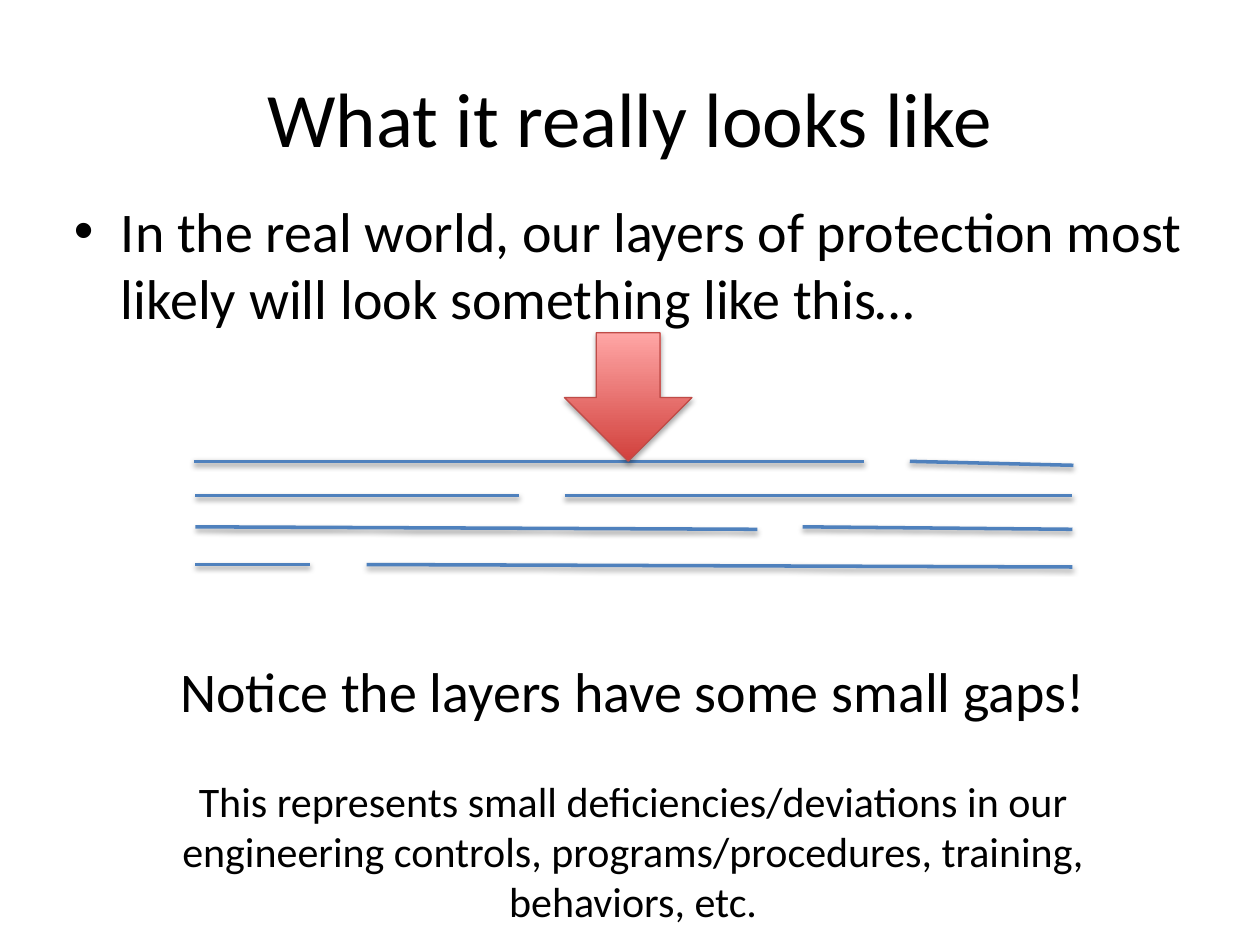
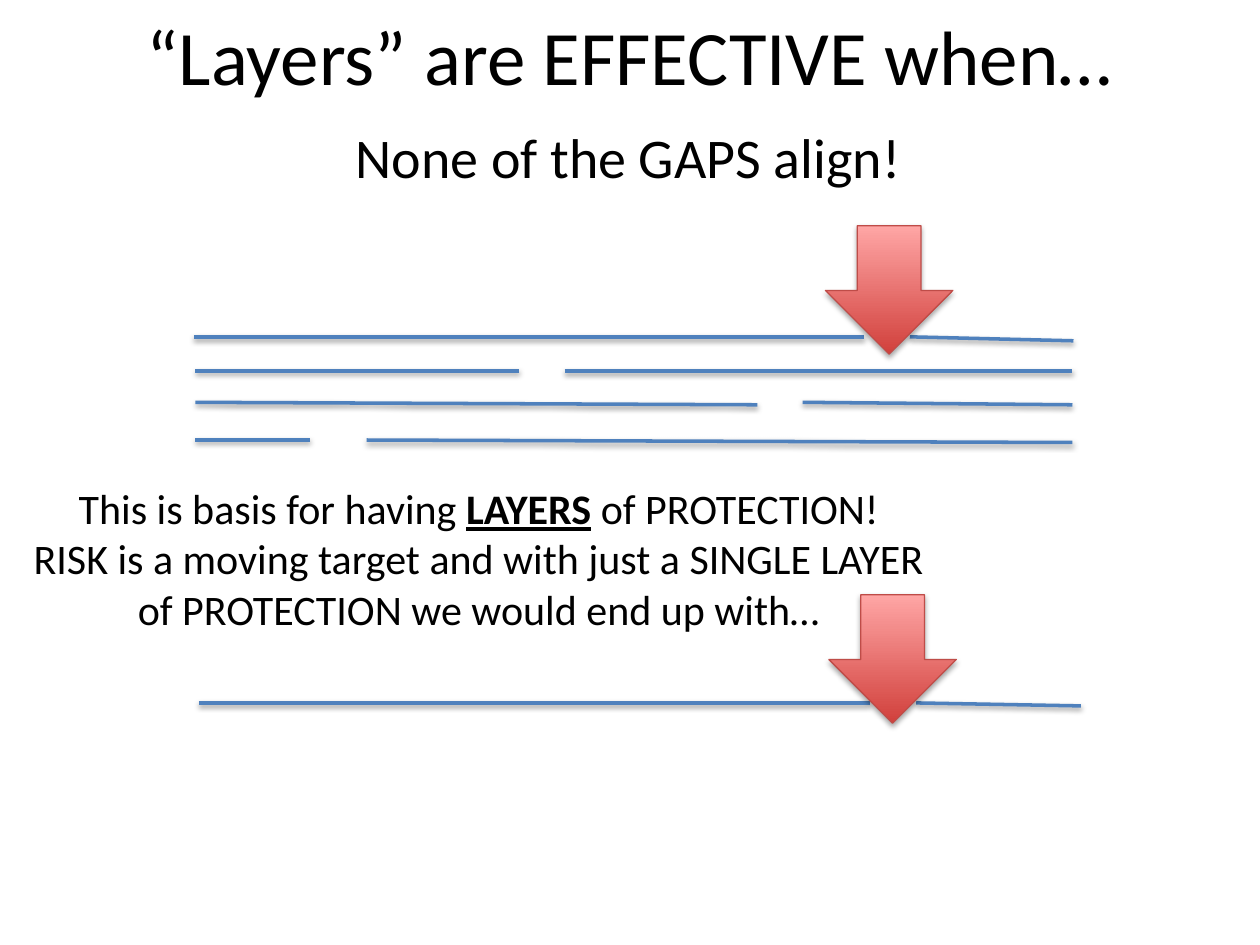
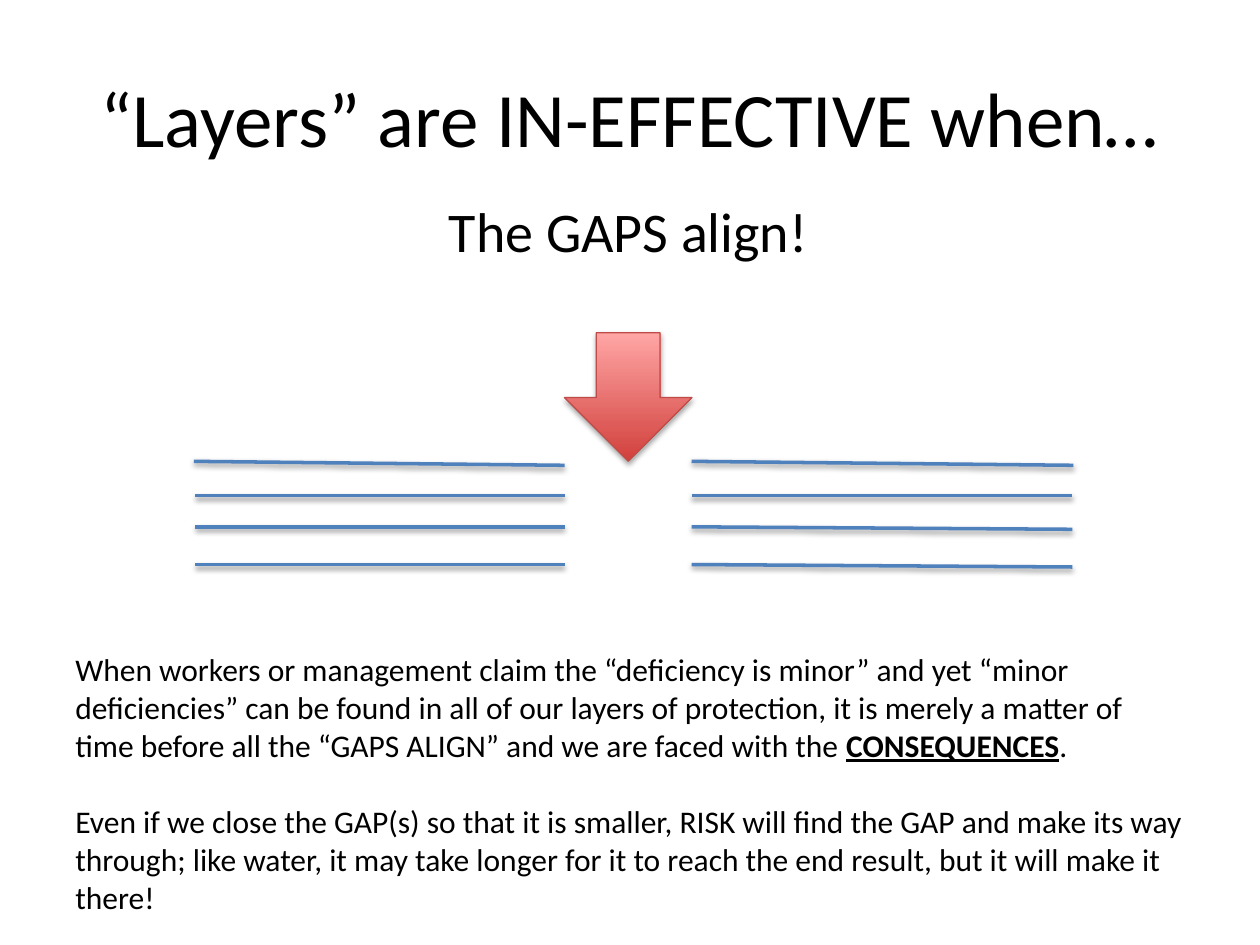
from lxml import etree
from pptx import Presentation
from pptx.dml.color import RGBColor
from pptx.enum.shapes import MSO_CONNECTOR, MSO_SHAPE
from pptx.enum.text import MSO_ANCHOR, PP_ALIGN
from pptx.oxml.ns import qn
from pptx.util import Cm, Pt

STRAIGHT = MSO_CONNECTOR.STRAIGHT
DOWN_ARROW = MSO_SHAPE.DOWN_ARROW
MIDDLE = MSO_ANCHOR.MIDDLE
CENTER, LEFT = PP_ALIGN.CENTER, PP_ALIGN.LEFT

BLACK = RGBColor(0x00, 0x00, 0x00)
LAYER_BLUE = RGBColor(0x4F, 0x81, 0xBD)
RISK_DARK = RGBColor(0xD1, 0x40, 0x3C)
RISK_LIGHT = RGBColor(0xFF, 0xA6, 0xA5)
RISK_EDGE = RGBColor(0xBF, 0x4C, 0x48)
FONT = "Calibri"
TITLE_ONLY = 5
TITLE_BOX = (1.27, 0.76, 22.86, 3.18)
LEAD_BOX = (1.24, 3.84, 22.86, 3)
ARROW_SIZE = (2.57, 2.59)
LAYER_OFFSETS = (0, 0.69, 1.32, 2.08)

SCATTERED_GAPS = [
    [(3.91, 17.42, 0), (18.34, 21.64, 0.08)],
    [(3.94, 10.46, 0), (11.38, 21.62, 0)],
    [(3.94, 15.27, 0.05), (16.18, 21.62, 0.05)],
    [(3.94, 6.25, 0), (7.39, 21.62, 0.05)],
]
ALIGNED_GAPS = [
    [(3.91, 11.38, 0.08), (13.94, 21.64, 0.08)],
    [(3.94, 11.38, 0), (13.94, 21.62, 0)],
    [(3.94, 11.38, 0), (13.94, 21.62, 0.05)],
    [(3.94, 11.38, 0), (13.94, 21.62, 0.05)],
]
SINGLE_LAYER = [[(4.01, 17.53, 0), (18.47, 21.79, 0.06)]]

SLIDES = [
    {
        "title": "What it really looks like",
        "title_box": TITLE_BOX,
        "texts": [
            (LEAD_BOX, [
                ("In the real world, our layers of protection most likely will "
                 "look something like this…", {"size": 32, "bullet": True}),
            ]),
            ((1.83, 13.11, 21.87, 5.74), [
                ("Notice the layers have some small gaps!",
                 {"size": 32, "align": CENTER}),
                ("This represents small deficiencies/deviations in our "
                 "engineering controls, programs/procedures, training, "
                 "behaviors, etc.",
                 {"size": 24, "align": CENTER, "before": 29.3}),
            ]),
        ],
        "layers": [(9.3, SCATTERED_GAPS)],
        "arrows": [(11.38, 6.71)],
    },
    {
        "title": "“Layers” are EFFECTIVE when…",
        "title_box": (1.27, 0, 22.86, 2.21),
        "texts": [
            ((1.24, 2.34, 22.86, 1.5), [
                ("None of the GAPS align!", {"size": 32, "align": CENTER}),
            ]),
            ((0.1, 9.6, 19.1, 3.33), [
                ("This is basis for having *LAYERS* of PROTECTION!",
                 {"size": 24, "align": CENTER}),
                ("RISK is a moving target and with just a SINGLE LAYER of "
                 "PROTECTION we would end up with…",
                 {"size": 24, "align": CENTER}),
            ]),
        ],
        "layers": [(6.79, SCATTERED_GAPS), (14.17, SINGLE_LAYER)],
        "arrows": [(16.64, 4.55), (16.71, 11.99)],
    },
    {
        "title": "“Layers” are IN-EFFECTIVE when…",
        "title_box": TITLE_BOX,
        "texts": [
            (LEAD_BOX, [
                ("The GAPS align!", {"size": 32, "align": CENTER}),
            ]),
            ((1.27, 12.98, 22.83, 5.64), [
                ("When workers or management claim the “deficiency is minor” "
                 "and yet “minor deficiencies” can be found in all of our "
                 "layers of protection, it is merely a matter of time before "
                 "all the “GAPS ALIGN” and we are faced with the "
                 "*CONSEQUENCES*.", {"size": 18}),
                ("Even if we close the GAP(s) so that it is smaller, RISK will "
                 "find the GAP and make its way through; like water, it may "
                 "take longer for it to reach the end result, but it will make "
                 "it there!", {"size": 18, "before": 22}),
            ]),
        ],
        "layers": [(9.3, ALIGNED_GAPS)],
        "arrows": [(11.38, 6.71)],
    },
]


def write(paragraph, text, size, align=LEFT, before=0, bullet=False):
    paragraph.alignment = align
    paragraph.space_before = Pt(before)
    if bullet:
        properties = paragraph._p.get_or_add_pPr()
        properties.set("marL", str(Cm(0.95)))
        properties.set("indent", str(-Cm(0.95)))
        etree.SubElement(properties, qn("a:buFont")).set("typeface", "Arial")
        etree.SubElement(properties, qn("a:buChar")).set("char", "•")
    for index, part in enumerate(text.split("*")):
        run = paragraph.add_run()
        run.text = part
        run.font.name = FONT
        run.font.size = Pt(size)
        run.font.color.rgb = BLACK
        if index % 2:
            run.font.bold = run.font.underline = True


def add_text(slide, box, paragraphs):
    frame = slide.shapes.add_textbox(*map(Cm, box)).text_frame
    frame.word_wrap = True
    for index, (text, style) in enumerate(paragraphs):
        paragraph = frame.add_paragraph() if index else frame.paragraphs[0]
        write(paragraph, text, **style)


def add_shadow(shape, distance, opacity):
    effects = etree.SubElement(shape._element.spPr, qn("a:effectLst"))
    shadow = etree.SubElement(
        effects, qn("a:outerShdw"), blurRad=str(Pt(3.1)),
        dist=str(Pt(distance)), dir="5400000", rotWithShape="0")
    color = etree.SubElement(shadow, qn("a:srgbClr"), val=str(BLACK))
    etree.SubElement(color, qn("a:alpha"), val=str(opacity * 1000))


def add_layers(slide, top, layers):
    for offset, segments in zip(LAYER_OFFSETS, layers):
        y = top + offset
        for start, end, drop in segments:
            segment = slide.shapes.add_connector(
                STRAIGHT, Cm(start), Cm(y), Cm(end), Cm(y + drop))
            segment.line.color.rgb = LAYER_BLUE
            segment.line.width = Pt(2)
            add_shadow(segment, 1.6, 38)


def add_risk_arrow(slide, left, top):
    arrow = slide.shapes.add_shape(
        DOWN_ARROW, *map(Cm, (left, top, *ARROW_SIZE)))
    arrow.fill.gradient()
    arrow.fill.gradient_angle = 90
    for stop, color in zip(arrow.fill.gradient_stops, (RISK_DARK, RISK_LIGHT)):
        stop.color.rgb = color
    arrow.line.color.rgb = RISK_EDGE
    arrow.line.width = Pt(0.75)
    add_shadow(arrow, 1.8, 35)


def add_title(slide, text, box):
    title = slide.shapes.title
    title.left, title.top, title.width, title.height = map(Cm, box)
    title.text_frame.vertical_anchor = MIDDLE
    write(title.text_frame.paragraphs[0], text, size=44, align=CENTER)


def main():
    deck = Presentation()
    deck.slide_width, deck.slide_height = Cm(25.4), Cm(19.05)
    for content in SLIDES:
        slide = deck.slides.add_slide(deck.slide_layouts[TITLE_ONLY])
        add_title(slide, content["title"], content["title_box"])
        for box, paragraphs in content["texts"]:
            add_text(slide, box, paragraphs)
        for top, layers in content["layers"]:
            add_layers(slide, top, layers)
        for left, top in content["arrows"]:
            add_risk_arrow(slide, left, top)
    deck.save("out.pptx")


if __name__ == "__main__":
    main()
